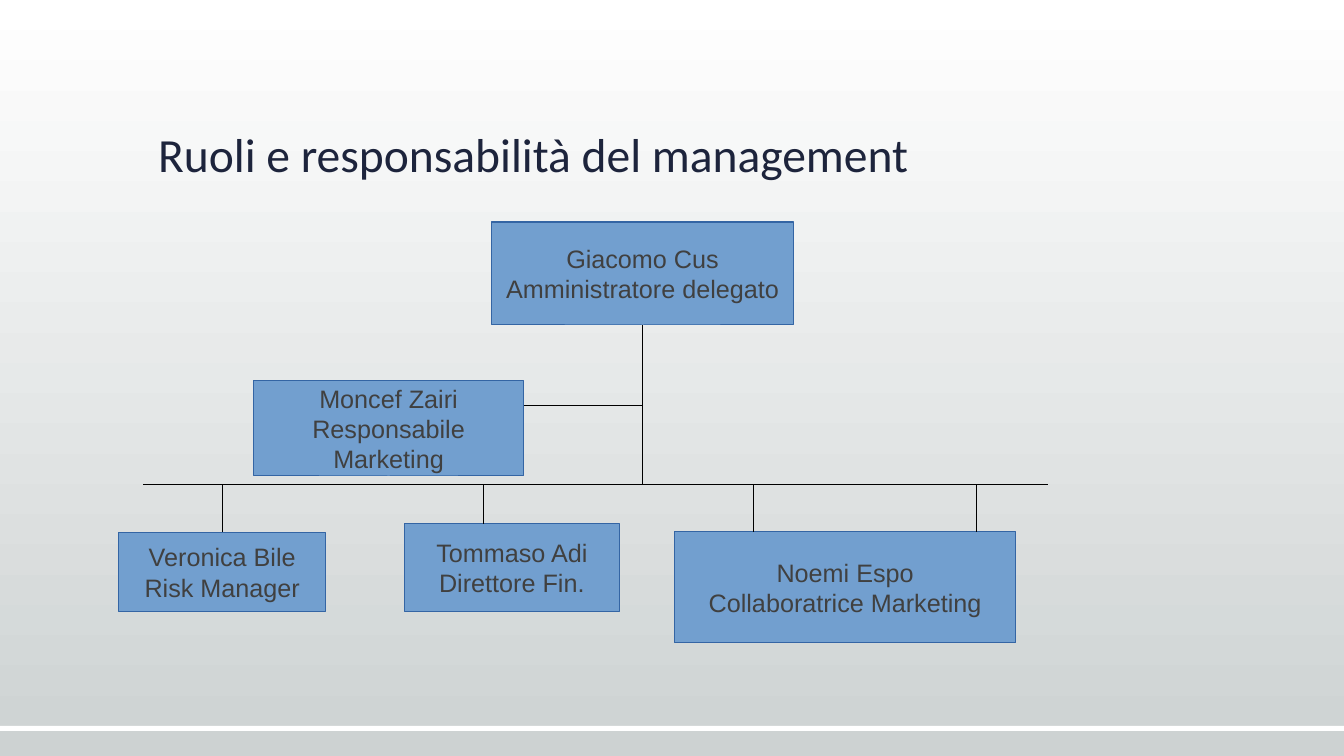
from dataclasses import dataclass

from lxml.etree import SubElement
from pptx import Presentation
from pptx.dml.color import RGBColor as RGB
from pptx.enum.shapes import MSO_CONNECTOR as CONNECTOR, MSO_SHAPE as SHAPE
from pptx.enum.text import MSO_ANCHOR as ANCHOR, PP_ALIGN as ALIGN
from pptx.oxml.ns import qn
from pptx.util import Pt

WIDTH, HEIGHT = 960.48, 540
TITLE_ONLY = 5
TOP, BOTTOM = 0, 2


@dataclass(frozen=True)
class Theme:
    sky: RGB = RGB.from_string("FFFFFF")
    ground: RGB = RGB.from_string("CDD2D2")
    title: RGB = RGB.from_string("1D243C")
    box: RGB = RGB.from_string("729FCF")
    border: RGB = RGB.from_string("3465A4")
    text: RGB = RGB.from_string("404040")
    link: RGB = RGB.from_string("000000")
    title_font: str = "Calibri"
    body_font: str = "Arial"
    title_size: float = 34
    body_size: float = 18
    line_width: float = 0.75


class OrgChart:
    def __init__(self, slide, theme):
        self.slide = slide
        self.theme = theme

    def background(self):
        fill = self.slide.background.fill
        fill.gradient()
        fill.gradient_angle = 270
        colors = (self.theme.sky, self.theme.ground)
        for stop, color, position in zip(fill.gradient_stops, colors, (0, 1)):
            stop.color.rgb = color
            stop.position = position

    def title(self, text, left, top, width, height):
        title = self.slide.shapes.title
        title.left, title.top = Pt(left), Pt(top)
        title.width, title.height = Pt(width), Pt(height)
        title.text_frame.text = text
        title.text_frame.vertical_anchor = ANCHOR.BOTTOM
        line = title.text_frame.paragraphs[0]
        line.alignment = ALIGN.LEFT
        line.line_spacing = 0.9
        self.style(line, self.theme.title_font, self.theme.title_size, self.theme.title)

    def style(self, paragraph, font, size, color):
        paragraph.font.name = font
        paragraph.font.size = Pt(size)
        paragraph.font.color.rgb = color

    def rectangle(self, left, top, width, height, color):
        rectangle = self.slide.shapes.add_shape(
            SHAPE.RECTANGLE, Pt(left), Pt(top), Pt(width), Pt(height))
        rectangle.shadow.inherit = False
        rectangle.fill.solid()
        rectangle.fill.fore_color.rgb = color
        rectangle.line.fill.background()
        return rectangle

    def person(self, name, role, left, top, width, height):
        person = self.rectangle(left, top, width, height, self.theme.box)
        person.line.color.rgb = self.theme.border
        person.line.width = Pt(self.theme.line_width)
        frame = person.text_frame
        frame.word_wrap = True
        frame.vertical_anchor = ANCHOR.MIDDLE
        frame.text = f"{name}\n{role}"
        for paragraph in frame.paragraphs:
            paragraph.alignment = ALIGN.CENTER
            self.style(paragraph, self.theme.body_font, self.theme.body_size, self.theme.text)
        return person

    def link(self, x1, y1, x2, y2):
        link = self.slide.shapes.add_connector(
            CONNECTOR.STRAIGHT, Pt(x1), Pt(y1), Pt(x2), Pt(y2))
        link.line.color.rgb = self.theme.link
        link.line.width = Pt(self.theme.line_width)
        SubElement(link._element.spPr, qn("a:effectLst"))
        return link


def main():
    deck = Presentation()
    deck.slide_width, deck.slide_height = Pt(WIDTH), Pt(HEIGHT)
    chart = OrgChart(deck.slides.add_slide(deck.slide_layouts[TITLE_ONLY]), Theme())

    chart.background()
    chart.rectangle(0, 518.4, WIDTH, 3.6, chart.theme.sky)
    chart.title("Ruoli e responsabilità del management", 105.8, 36.7, 748.8, 97.2)

    ceo = chart.person("Giacomo Cus", "Amministratore delegato", 351.4, 158.6, 215.6, 73.6)
    marketing = chart.person("Moncef Zairi", "Responsabile Marketing", 181.2, 272, 193, 68)
    risk = chart.person("Veronica Bile", "Risk Manager", 85, 380, 147.6, 57)
    finance = chart.person("Tommaso Adi", "Direttore Fin.", 289, 374.2, 153.6, 62.6)
    assistant = chart.person("Noemi Espo", "Collaboratrice Marketing", 482, 380, 244, 79.2)

    trunk_x = (ceo.left + ceo.width / 2) / Pt(1)
    rail_y, staff_y = 346, 289.4
    trunk = chart.link(trunk_x, (ceo.top + ceo.height) / Pt(1), trunk_x, rail_y)
    trunk.begin_connect(ceo, BOTTOM)
    chart.link(trunk_x, staff_y, (marketing.left + marketing.width) / Pt(1), staff_y)
    chart.link(748.8, rail_y, 102.2, rail_y)

    risk_x = (risk.left + risk.width / 2) / Pt(1)
    risk_drop = chart.link(risk_x, rail_y, risk_x, risk.top.pt)
    risk_drop.end_connect(risk, TOP)
    for x, person in ((345.8, finance), (538.6, assistant), (697.6, assistant)):
        chart.link(x, rail_y, x, person.top.pt)

    deck.save("out.pptx")


if __name__ == "__main__":
    main()
